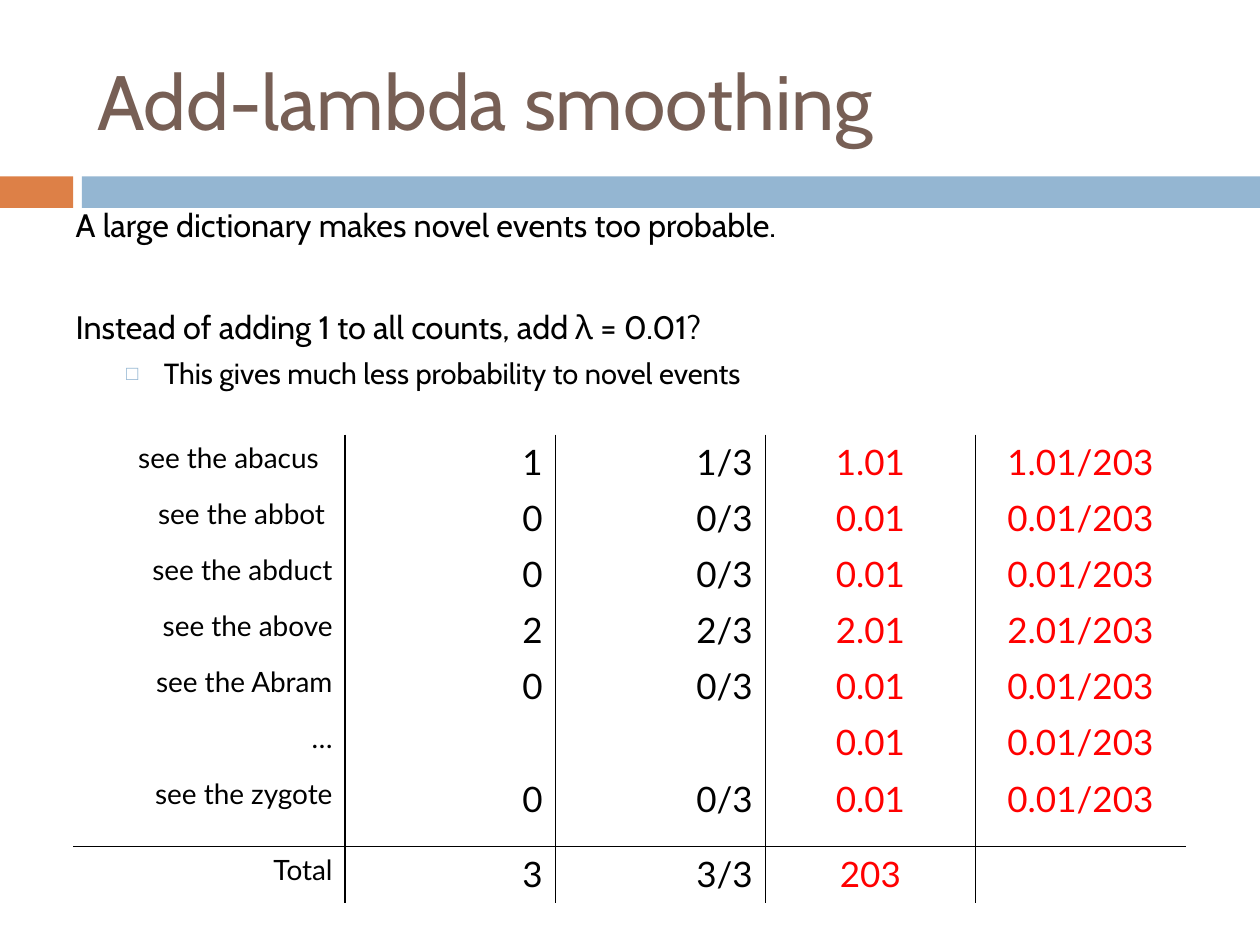
import pptx
import pptx.util
import pptx.oxml
import pptx.dml.color
import pptx.enum.shapes
import pptx.enum.text
from dataclasses import dataclass
from pptx.util import Inches, Pt

COLORS = {"title": "775F55", "orange": "DD8047", "blue": "94B6D2",
          "text": "000000", "smoothed": "FF0000"}
ALIGN = pptx.enum.text.PP_ALIGN
NS = 'xmlns:a="http://schemas.openxmlformats.org/drawingml/2006/main"'


@dataclass
class Bar:
    left: float
    width: float
    color: str


@dataclass
class Count:
    event: str
    count: str
    ratio: str
    smoothed: str
    estimate: str
    indent: float = 0.1


BARS = [Bar(0, 0.58, "orange"), Bar(0.65, 9.35, "blue")]
COUNTS = [
    Count("see the abacus", "1", "1/3", "1.01", "1.01/203", 0.21),
    Count("see the abbot", "0", "0/3", "0.01", "0.01/203", 0.16),
    Count("see the abduct", "0", "0/3", "0.01", "0.01/203"),
    Count("see the above", "2", "2/3", "2.01", "2.01/203"),
    Count("see the Abram", "0", "0/3", "0.01", "0.01/203"),
    Count("…", "", "", "0.01", "0.01/203"),
    Count("see the zygote", "0", "0/3", "0.01", "0.01/203"),
    Count("Total", "3", "3/3", "203", ""),
]


def rgb(name: str) -> pptx.dml.color.RGBColor:
    return pptx.dml.color.RGBColor.from_string(COLORS[name])


def style(p, font: str, size: float, color: str) -> None:
    for r in p.runs:
        r.font.name, r.font.size = font, Pt(size)
        r.font.color.rgb = rgb(color)


def place(sp, left: float, top: float, width: float, height: float) -> None:
    sp.left, sp.top = Inches(left), Inches(top)
    sp.width, sp.height = Inches(width), Inches(height)


def draw_bar(s, bar: Bar) -> None:
    sp = s.shapes.add_shape(pptx.enum.shapes.MSO_SHAPE.RECTANGLE, Inches(bar.left),
                            Inches(1.4), Inches(bar.width), Inches(0.25))
    sp.shadow.inherit = False
    sp.fill.solid()
    sp.fill.fore_color.rgb = rgb(bar.color)
    sp.line.fill.background()


def set_bullet(p, left: float, hanging: float, bullet: str) -> None:
    pPr = p._p.get_or_add_pPr()
    pPr.set("marL", str(Inches(left)))
    pPr.set("indent", str(-Inches(hanging)))
    if not bullet:
        pPr.append(pptx.oxml.parse_xml(f"<a:buNone {NS}/>"))
        return
    for xml in (f'<a:buClr {NS}><a:srgbClr val="{COLORS["blue"]}"/></a:buClr>',
                f'<a:buSzPct {NS} val="70000"/>',
                f'<a:buChar {NS} char="{bullet}"/>'):
        pPr.append(pptx.oxml.parse_xml(xml))


def set_borders(cell, sides: str) -> None:
    """Rule the named sides (L, R, T, B) and clear the others."""
    tcPr = cell._tc.get_or_add_tcPr()
    for i, side in enumerate("LRTB"):
        fill = (f'<a:solidFill><a:srgbClr val="{COLORS["text"]}"/></a:solidFill>'
                if side in sides else "<a:noFill/>")
        tcPr.insert(i, pptx.oxml.parse_xml(f'<a:ln{side} {NS} w="12700">{fill}</a:ln{side}>'))


def draw_counts(s) -> None:
    table = s.shapes.add_table(len(COUNTS), 5, Inches(0.58), Inches(3.45),
                               Inches(8.83), Inches(3.71)).table
    table.first_row = table.horz_banding = False
    for i, col in enumerate(table.columns):
        col.width = Inches(6.67 / 4) if i else Inches(2.16)
    last = len(COUNTS) - 1
    for y, item in enumerate(COUNTS):
        table.rows[y].height = Inches({last - 1: 0.6, last: 0.45}.get(y, 2.67 / 6))
        values = (item.event, item.count, item.ratio, item.smoothed, item.estimate)
        for x, value in enumerate(values):
            cell = table.cell(y, x)
            cell.fill.background()
            set_borders(cell, ("L" if x else "") + ("R" if x < 4 else "")
                        + ("T" if y == last else "") + ("B" if y == last - 1 else ""))
            if x == 0:
                cell.margin_right = Inches(item.indent)
            p = cell.text_frame.paragraphs[0]
            p.text = value
            p.alignment = ALIGN.CENTER if x > 2 else ALIGN.RIGHT
            style(p, "Lato", 20 if x else 16, "smoothed" if x > 2 else "text")


def main() -> None:
    prs = pptx.Presentation()
    prs.slide_width, prs.slide_height = Inches(10), Inches(7.5)
    s = prs.slides.add_slide(prs.slide_layouts[1])

    # Divider under the title
    for bar in BARS:
        draw_bar(s, bar)

    # Title
    title = s.shapes.title
    place(title, 0.67, 0.25, 8.92, 1.08)
    title.text_frame.text = "Add-lambda smoothing"
    title.text_frame.vertical_anchor = pptx.enum.text.MSO_ANCHOR.MIDDLE
    p = title.text_frame.paragraphs[0]
    p.alignment = ALIGN.LEFT
    style(p, "Cabin", 44, "title")

    # Body: text, level, size, space before
    body = s.placeholders[1]
    place(body, 0.5, 1.58, 9.33, 1.5)
    tf = body.text_frame
    tf.auto_size = pptx.enum.text.MSO_AUTO_SIZE.NONE
    lines = [("A large dictionary makes novel events too probable.", 0, 18.5, 7),
             ("Instead of adding 1 to all counts, add λ = 0.01?", 0, 18.5, 36),
             ("This gives much less probability to novel events", 1, 16.6, 5.5)]
    tf.text = "\n".join(line[0] for line in lines)
    for p, (_, level, size, before) in zip(tf.paragraphs, lines):
        p.level, p.space_before = level, Pt(before)
        set_bullet(p, 0.7 * level, 0.3 * level, "□" if level else "")
        style(p, "Cabin", size, "text")

    # Table of counts
    draw_counts(s)
    prs.save("out.pptx")


if __name__ == "__main__":
    main()
